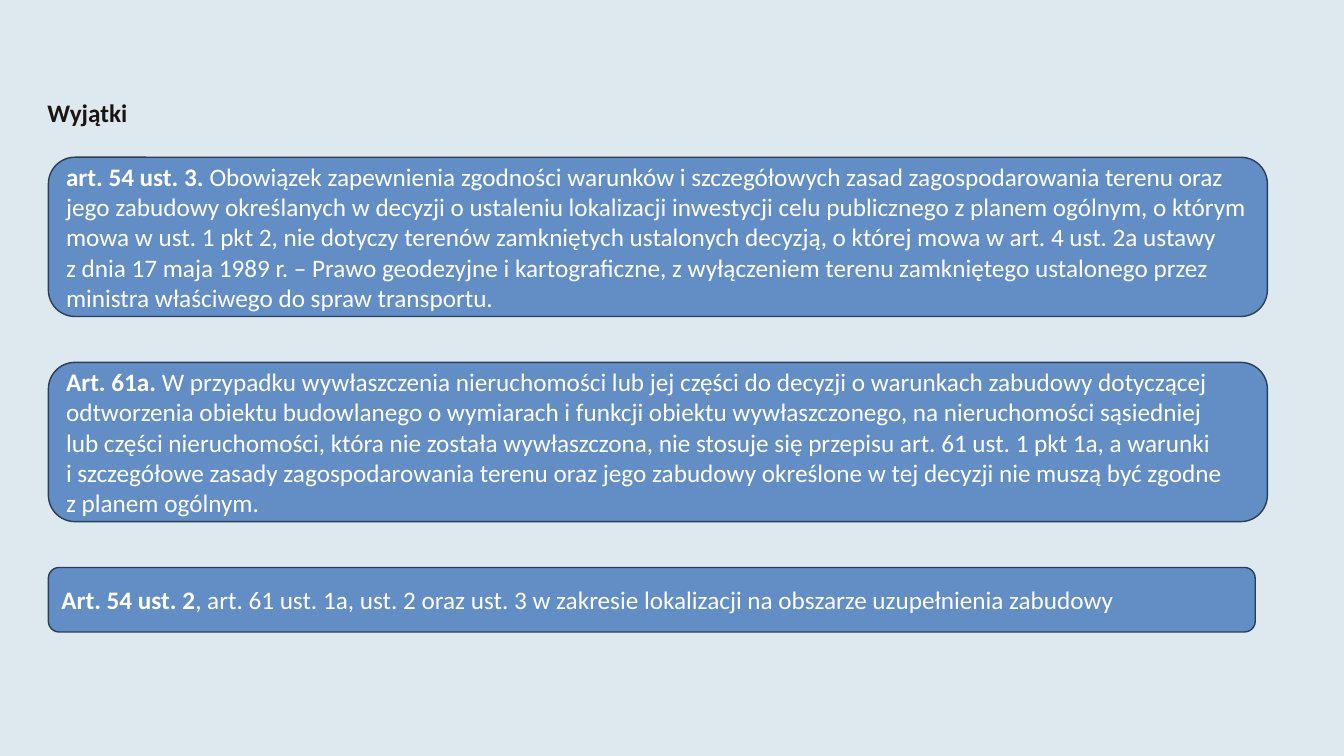
from pptx import Presentation
from pptx.dml.color import RGBColor
from pptx.enum.shapes import MSO_SHAPE
from pptx.enum.text import MSO_ANCHOR, MSO_AUTO_SIZE, PP_ALIGN
from pptx.util import Inches, Pt

ROUNDED = MSO_SHAPE.ROUNDED_RECTANGLE
TOP, MIDDLE = MSO_ANCHOR.TOP, MSO_ANCHOR.MIDDLE
LEFT = PP_ALIGN.LEFT
FIT_SHAPE = MSO_AUTO_SIZE.SHAPE_TO_FIT_TEXT
TITLE_ONLY = 5

BOX_LEFT, FIRST_TOP, BOX_PITCH = 0.48, 1.56, 2.035

# Each provision: width, height, bold reference, lines of text
PROVISIONS = [
    (12.09, 1.58, "art. 54 ust. 3. ", [
        "Obowiązek zapewnienia zgodności warunków i szczegółowych zasad zagospodarowania terenu oraz "
        "jego zabudowy określanych w decyzji o ustaleniu lokalizacji inwestycji celu publicznego "
        "z planem ogólnym, o którym",
        "mowa w ust. 1 pkt 2, nie dotyczy terenów zamkniętych ustalonych decyzją, "
        "o której mowa w art. 4 ust. 2a ustawy",
        "z dnia 17 maja 1989 r. – Prawo geodezyjne i kartograficzne, "
        "z wyłączeniem terenu zamkniętego ustalonego przez",
        "ministra właściwego do spraw transportu.",
    ]),
    (12.09, 1.58, "Art. 61a. ", [
        "W przypadku wywłaszczenia nieruchomości lub jej części do decyzji "
        "o warunkach zabudowy dotyczącej",
        "odtworzenia obiektu budowlanego o wymiarach i funkcji obiektu wywłaszczonego, "
        "na nieruchomości sąsiedniej",
        "lub części nieruchomości, która nie została wywłaszczona, nie stosuje się przepisu "
        "art. 61 ust. 1 pkt 1a, a warunki",
        "i szczegółowe zasady zagospodarowania terenu oraz jego zabudowy określone w tej decyzji "
        "nie muszą być zgodne",
        "z planem ogólnym.",
    ]),
    (11.97, 0.64, "Art. 54 ust. 2", [
        ", art. 61 ust. 1a, ust. 2 oraz ust. 3 w zakresie lokalizacji "
        "na obszarze uzupełnienia zabudowy",
    ]),
]


def rgb(hex_color):
    return RGBColor.from_string(hex_color)


class ProvisionSlide:
    FONT, SIZE = "Calibri", 18
    BACKGROUND, INK = "DEE8EF", "191515"
    BOX_FILL, BOX_LINE, BOX_TEXT = "628EC5", "2B3E56", "FFFFFF"

    def __init__(self, presentation):
        self.slide = presentation.slides.add_slide(presentation.slide_layouts[TITLE_ONLY])
        fill = self.slide.background.fill
        fill.solid()
        fill.fore_color.rgb = rgb(self.BACKGROUND)

    def run(self, paragraph, text, color, bold=False):
        run = paragraph.add_run()
        run.text = text
        run.font.name = self.FONT
        run.font.size = Pt(self.SIZE)
        run.font.bold = bold
        run.font.color.rgb = rgb(color)

    def title(self, text, left, top, width, height):
        title = self.slide.shapes.title
        title.left, title.top = Inches(left), Inches(top)
        title.width, title.height = Inches(width), Inches(height)
        frame = title.text_frame
        frame.word_wrap = True
        frame.auto_size = FIT_SHAPE
        frame.vertical_anchor = TOP
        heading = frame.paragraphs[0]
        heading.alignment = LEFT
        heading.line_spacing = 1.2
        heading.space_before = Pt(0)
        self.run(heading, text, self.INK, bold=True)

    def provision(self, left, top, width, height, reference, lines):
        """Add a rounded box whose text opens with a bold legal reference."""
        box = self.slide.shapes.add_shape(
            ROUNDED, Inches(left), Inches(top), Inches(width), Inches(height))
        box.shadow.inherit = False
        box.fill.solid()
        box.fill.fore_color.rgb = rgb(self.BOX_FILL)
        box.line.color.rgb = rgb(self.BOX_LINE)
        box.line.width = Pt(1)
        frame = box.text_frame
        frame.word_wrap = True
        frame.vertical_anchor = MIDDLE
        for index, line in enumerate(lines):
            paragraph = frame.add_paragraph() if index else frame.paragraphs[0]
            paragraph.alignment = LEFT
            if index == 0:
                self.run(paragraph, reference, self.BOX_TEXT, bold=True)
            self.run(paragraph, line, self.BOX_TEXT)


def main():
    presentation = Presentation()
    presentation.slide_width, presentation.slide_height = Inches(13.33), Inches(7.5)
    exceptions = ProvisionSlide(presentation)
    exceptions.title("Wyjątki", 0.37, 0.86, 12.6, 0.44)
    for row, (width, height, reference, lines) in enumerate(PROVISIONS):
        top = FIRST_TOP + row * BOX_PITCH
        exceptions.provision(BOX_LEFT, top, width, height, reference, lines)
    presentation.save("out.pptx")


if __name__ == "__main__":
    main()
